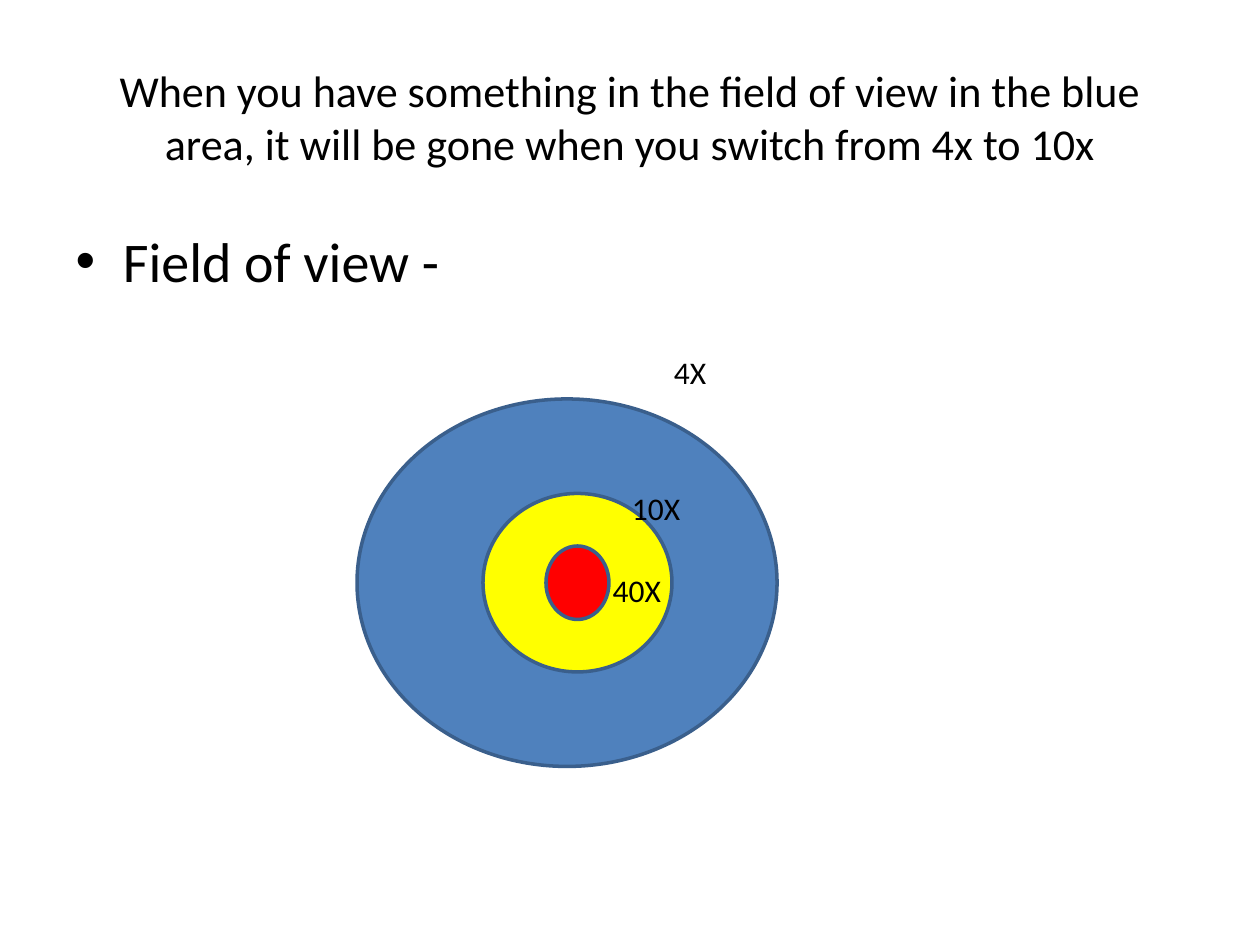
"""Build a slide of nested fields of view at three magnifications."""
from pptx import Presentation
from pptx.dml.color import RGBColor
from pptx.enum.shapes import MSO_SHAPE
from pptx.enum.text import MSO_ANCHOR, PP_ALIGN
from pptx.util import Pt

OVAL = MSO_SHAPE.OVAL
CENTER = PP_ALIGN.CENTER
MIDDLE = MSO_ANCHOR.MIDDLE

TITLE = ("When you have something in the field of view in the blue area, "
         "it will be gone when you switch from 4x to 10x")
BULLET = "Field of view -"
TITLE_BOX = (36, 21.6, 648, 90)
BODY_BOX = (36, 126, 648, 356.4)

FIELDS = [
    {"label": "4X", "fill": "4F81BD", "oval": (204, 228, 240, 210), "text": (378, 198, 114, 30)},
    {"label": "10X", "fill": "FFFF00", "oval": (276, 282, 108, 102), "text": (354, 276, 60, 29)},
    {"label": "40X", "fill": "FF0000", "oval": (312, 312, 36, 42), "text": (343, 322.8, 51, 29)},
]

THEME = {"font": "Calibri", "ink": "000000", "outline": "3A5F8C", "line": 2,
         "title": 25.2, "body": 32, "label": 18}


def rgb(name):
    return RGBColor.from_string(THEME.get(name, name))


def place(shape, box):
    shape.left, shape.top, shape.width, shape.height = map(Pt, box)


def write(shape, text, size):
    tf = shape.text_frame
    tf.word_wrap = True
    p = tf.paragraphs[0]
    p.text = text
    p.font.name = THEME["font"]
    p.font.size = Pt(THEME[size])
    p.font.color.rgb = rgb("ink")
    return p


def add_field(slide, field):
    s = slide.shapes.add_shape(OVAL, *map(Pt, field["oval"]))
    s.shadow.inherit = False
    s.fill.solid()
    s.fill.fore_color.rgb = rgb(field["fill"])
    s.line.color.rgb = rgb("outline")
    s.line.width = Pt(THEME["line"])
    write(slide.shapes.add_textbox(*map(Pt, field["text"])), field["label"], "label")


def main():
    prs = Presentation()
    prs.slide_width, prs.slide_height = Pt(720), Pt(540)
    slide = prs.slides.add_slide(prs.slide_layouts[1])
    title, body = slide.placeholders
    place(title, TITLE_BOX)
    title.text_frame.vertical_anchor = MIDDLE
    write(title, TITLE, "title").alignment = CENTER
    place(body, BODY_BOX)
    write(body, BULLET, "body")
    for field in FIELDS:
        add_field(slide, field)
    prs.save("out.pptx")


if __name__ == "__main__":
    main()
